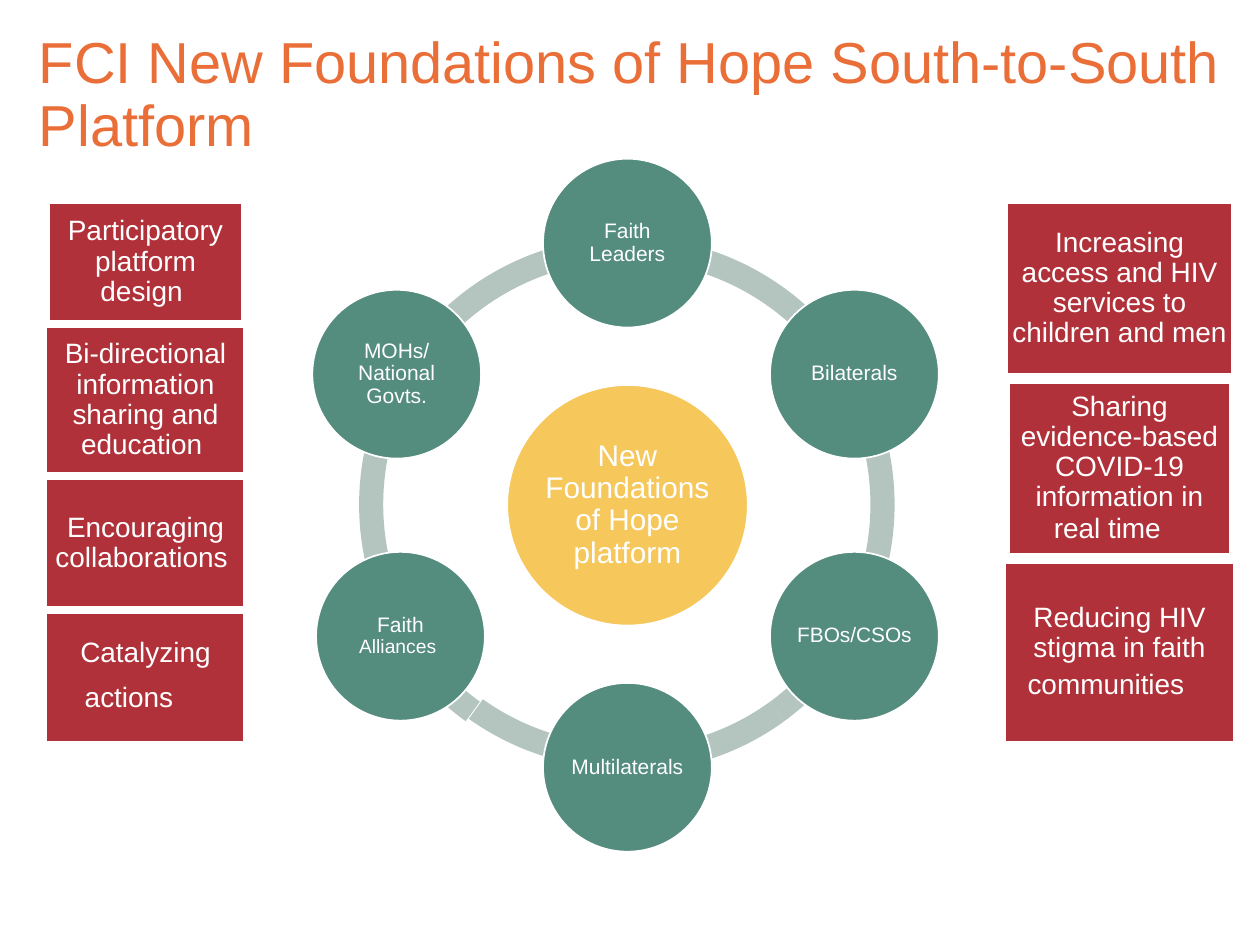
import math
from dataclasses import dataclass

import pptx
import pptx.dml.color
import pptx.enum.shapes
import pptx.enum.text
import pptx.util

Inches = pptx.util.Inches
Shape = pptx.enum.shapes.MSO_SHAPE
Align = pptx.enum.text.PP_ALIGN
Anchor = pptx.enum.text.MSO_ANCHOR

FONT = "Arial"
COLORS = {
    "title": "EA6E38",
    "ring": "B4C5C0",
    "hub": "F6C75B",
    "node": "548C7E",
    "card": "B03139",
    "white": "FFFFFF",
}
HUB_X, HUB_Y = 4.98, 4.01
ORBIT = 2.08
NODE_SIZE, HUB_SIZE, RING_SIZE = 1.34, 1.91, 4.25

Runs = list[tuple[str, float]]


@dataclass
class Arc:
    start: float
    end: float
    left: float = 2.85
    top: float = 1.88


@dataclass
class Node:
    angle: float
    runs: Runs
    shift: float = 0


@dataclass
class Card:
    width: float
    height: float
    runs: Runs


@dataclass
class Stack:
    center: float
    gap: float
    cards: list[Card]


ARCS = [
    Arc(126, 162.52, left=2.82),
    Arc(89.48, 125.48, left=2.83, top=1.85),
    Arc(54, 90),
    Arc(18, 54),
    Arc(198, 18),
    Arc(162, 198),
]
NODES = [
    Node(-90, [("Faith Leaders", 12)]),
    Node(-30, [("Bilaterals", 12)]),
    Node(30, [("FBOs/CSOs", 11.9)]),
    Node(90, [("Multilaterals", 12)]),
    Node(150, [("Faith", 12), (" Alliances ", 11)]),
    Node(210, [("MOHs/ National Govts.", 12)], shift=-0.03),
]
STACKS = [
    Stack(1.155, 0.05, [
        Card(1.53, 0.94, [("Participatory platform design ", 16)]),
        Card(1.57, 1.15, [("Bi-directional information sharing and education ", 16)]),
        Card(1.57, 1.02, [("Encouraging collaborations ", 16)]),
        Card(1.57, 1.02, [("Catalyzing actions ", 16), ("  ", 26)]),
    ]),
    Stack(8.885, 0.07, [
        Card(1.79, 1.36, [("Increasing access and HIV services to children and men ", 16)]),
        Card(1.75, 1.36, [("Sharing evidence-based COVID-19 information in real time ", 16),
                          ("  ", 17)]),
        Card(1.82, 1.42, [("Reducing HIV stigma in faith communities ", 16), ("  ", 20)]),
    ]),
]


def paint(color: str) -> pptx.dml.color.RGBColor:
    return pptx.dml.color.RGBColor.from_string(COLORS[color])


def write(frame, runs: Runs, *, color="white", align=Align.CENTER,
          anchor=Anchor.MIDDLE, inset=(0.04, 0.04)) -> None:
    """Fill a text frame with one paragraph; inset is (side, top and bottom)."""
    frame.word_wrap = True
    frame.vertical_anchor = anchor
    frame.margin_left = frame.margin_right = Inches(inset[0])
    frame.margin_top = frame.margin_bottom = Inches(inset[1])
    para = frame.paragraphs[0]
    para.alignment = align
    para.line_spacing = 0.9
    for text, size in runs:
        run = para.add_run()
        run.text = text
        run.font.name = FONT
        run.font.size = pptx.util.Pt(size)
        run.font.color.rgb = paint(color)


def draw(slide, kind, left: float, top: float, width: float, height: float,
         color: str, outline: bool = True):
    shape = slide.shapes.add_shape(
        kind, Inches(left), Inches(top), Inches(width), Inches(height))
    shape.shadow.inherit = False
    shape.fill.solid()
    shape.fill.fore_color.rgb = paint(color)
    if outline:
        shape.line.color.rgb = paint("white")
        shape.line.width = pptx.util.Pt(1)
    else:
        shape.line.fill.background()
    return shape


def draw_arc(slide, arc: Arc) -> None:
    shape = draw(slide, Shape.BLOCK_ARC, arc.left, arc.top,
                 RING_SIZE, RING_SIZE, "ring", outline=False)
    # Angles are stored in 1/60000 degree, adjustments count in 1/100000.
    shape.adjustments[0] = arc.start * 0.6
    shape.adjustments[1] = arc.end * 0.6
    shape.adjustments[2] = 0.045


def draw_disc(slide, x: float, y: float, size: float, color: str, runs: Runs) -> None:
    """Draw a labelled circle around the point x, y."""
    disc = draw(slide, Shape.OVAL, x - size / 2, y - size / 2, size, size, color)
    write(disc.text_frame, runs, inset=(0.02, 0.02))


def draw_node(slide, node: Node) -> None:
    turn = math.radians(node.angle)
    draw_disc(slide, HUB_X + ORBIT * math.cos(turn) + node.shift,
              HUB_Y + ORBIT * math.sin(turn), NODE_SIZE, "node", node.runs)


def draw_stack(slide, stack: Stack) -> None:
    top = 1.61
    for card in stack.cards:
        box = draw(slide, Shape.RECTANGLE, stack.center - card.width / 2, top,
                   card.width, card.height, "card")
        write(box.text_frame, card.runs)
        top += card.height + stack.gap


def main() -> None:
    deck = pptx.Presentation()
    deck.slide_width, deck.slide_height = Inches(10), Inches(7.5)
    slide = deck.slides.add_slide(deck.slide_layouts[6])

    title = slide.shapes.add_textbox(Inches(0.21), Inches(0.22), Inches(9.67), Inches(0.7))
    write(title.text_frame, [("FCI New Foundations of Hope South-to-South Platform", 33)],
          color="title", align=Align.LEFT, anchor=Anchor.TOP, inset=(0.1, 0.05))

    for arc in ARCS:
        draw_arc(slide, arc)
    draw_disc(slide, HUB_X, HUB_Y, HUB_SIZE, "hub", [("New Foundations of Hope platform", 17)])
    for node in NODES:
        draw_node(slide, node)
    for stack in STACKS:
        draw_stack(slide, stack)

    deck.save("out.pptx")


if __name__ == "__main__":
    main()
